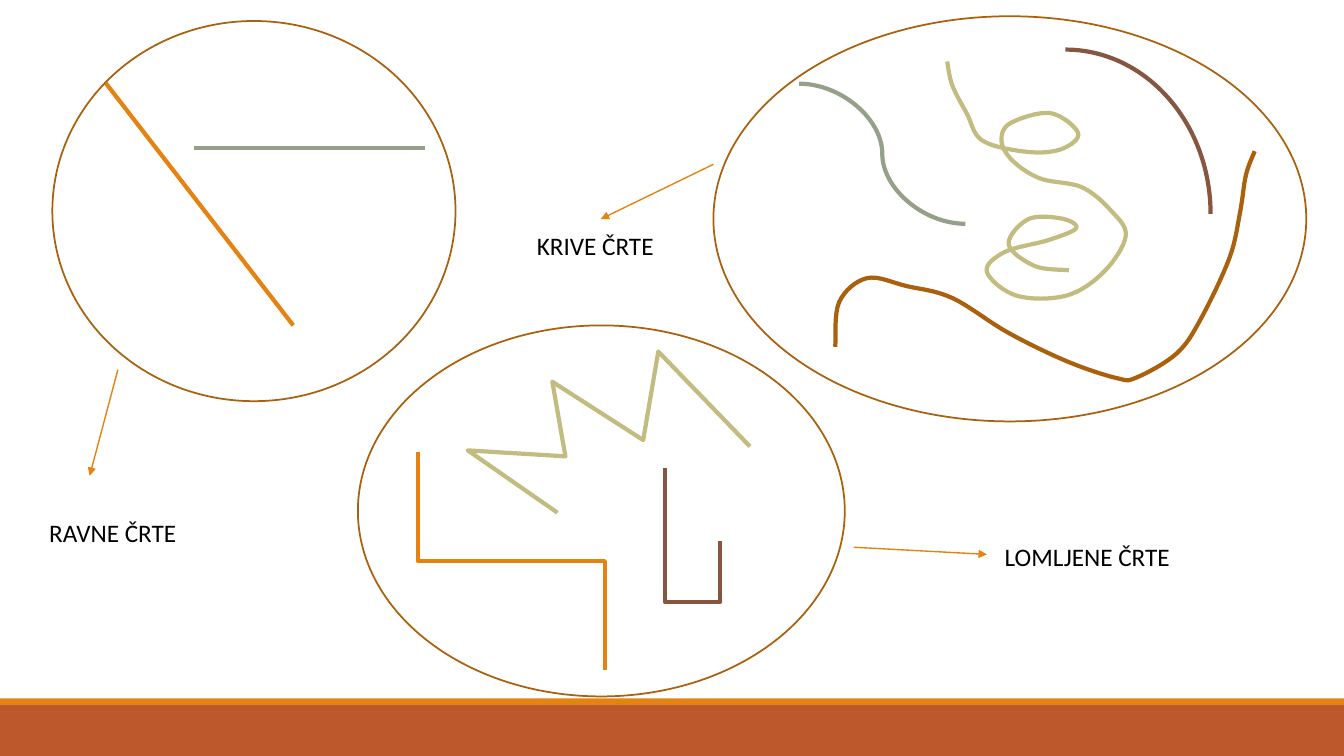
from lxml import etree
from pptx import Presentation, util as u
from pptx.dml.color import RGBColor
from pptx.enum import shapes as s, text as t
from pptx.oxml.ns import qn

HUES = {"orange": "E48312", "rust": "BD582C", "brown": "A9610D",
        "plum": "865640", "sage": "94A088", "olive": "C2BC80", "black": "000000"}
LINE = s.MSO_CONNECTOR
FORM = s.MSO_SHAPE
BOLD, RING, THIN = 3, 1.25, 1  # line widths in points
GRID = 1000  # freeform steps per centimetre
STEPS = 8    # short segments between two knots of a curve

# Knots in centimetres, from the top left corner of each drawn line
ZIGZAG = [(2.26, 4.06), (0, 2.49), (2.46, 2.64), (2.13, 0.76), (4.42, 2.23),
          (4.8, 0), (7.11, 2.39)]
WAVE = [(0, 4.93), (0.1, 3.8), (0.8, 3.2), (1.8, 3.4), (2.95, 3.7), (4.35, 4.57),
        (5.85, 5.3), (7.1, 5.72), (7.6, 5.7), (8.6, 5.1), (9.2, 4.25),
        (9.93, 2.7), (10.2, 1.55), (10.35, 0.6), (10.57, 0)]
SCROLL = [(3.07, 5.26), (2.2, 5.15), (1.55, 4.6), (2.05, 3.97), (2.9, 3.96),
          (3.25, 4.2), (2.55, 4.5), (1.45, 4.8), (1, 5.3), (1.75, 5.9), (3, 5.9),
          (3.95, 5.3), (4.5, 4.4), (4.15, 3.78), (3.4, 3.17), (2.35, 2.95),
          (1.65, 2.5), (1.37, 2), (1.6, 1.55), (2.6, 1.3), (3.3, 1.8),
          (2.9, 2.2), (2.05, 2.28), (0.9, 2), (0.5, 1.32), (0.13, 0.6), (0, 0)]


def tint(hue):
    return RGBColor.from_string(HUES[hue])


def shift(box, at):
    """Turn a place inside a box into a place on the slide."""
    return [edge + step for edge, step in zip(box, at)]


def smooth(knots):
    """Lead a Catmull-Rom curve through the knots."""
    ends = [knots[0], *knots, knots[-1]]
    curve = [knots[0]]
    for span in zip(ends, ends[1:], ends[2:], ends[3:]):
        for step in range(1, STEPS + 1):
            f = step / STEPS
            curve.append([
                b + f / 2 * (c - a + f * (2 * a - 5 * b + 4 * c - d
                                          + f * (3 * b - a - 3 * c + d)))
                for a, b, c, d in zip(*span)])
    return curve


# Basic parts

def stroke(part, hue, width):
    part.line.color.rgb = tint(hue)
    part.line.width = u.Pt(width)


def link(page, box, kind, start, end, hue, width=BOLD):
    ends = map(u.Cm, shift(box, start) + shift(box, end))
    line = page.shapes.add_connector(kind, *ends)
    stroke(line, hue, width)
    etree.SubElement(line._element.spPr, qn("a:effectLst"))
    return line


def elbow(page, box, start, size, hue, bend=50):
    """Bent line that leaves downwards; bend is its crossbar's place in percent."""
    line = link(page, box, LINE.ELBOW, start, shift(start, size), hue)
    props = line._element.spPr
    frame = props.find(qn("a:xfrm"))
    for key, value in {"rot": "16200000", "flipH": "1"}.items():
        frame.set(key, value)
    guides = props.find(qn("a:prstGeom")).get_or_add_avLst()
    etree.SubElement(guides, qn("a:gd"), name="adj1", fmla=f"val {bend * 1000}")


def shape(page, form, box):
    part = page.shapes.add_shape(form, *map(u.Cm, box))
    part.shadow.inherit = False
    return part


def outline(page, form, box, hue, width):
    part = shape(page, form, box)
    part.fill.background()
    stroke(part, hue, width)


def free(page, box, at, points, hue):
    first, *rest = [(x * GRID, y * GRID) for x, y in points]
    pen = page.shapes.build_freeform(*first, scale=u.Cm(1) / GRID)
    pen.add_line_segments(rest, close=False)
    part = pen.convert_to_shape(*map(u.Cm, shift(box, at)))
    part.shadow.inherit = False
    part.fill.background()
    stroke(part, hue, BOLD)


def label(page, box, at, width, words):
    place = shift(box, at) + [width, 1.02]
    frame = page.shapes.add_textbox(*map(u.Cm, place)).text_frame
    frame.word_wrap = True
    frame.auto_size = t.MSO_AUTO_SIZE.SHAPE_TO_FIT_TEXT
    frame.text = words
    font = frame.paragraphs[0].runs[0].font
    for key, value in {"name": "Calibri", "size": u.Pt(18)}.items():
        setattr(font, key, value)
    font.color.rgb = tint("black")


def frame_set(page, box, tail, tip, at, width, words):
    """Ring a set of lines and point from it to its name."""
    outline(page, FORM.OVAL, box, "brown", RING)
    line = link(page, box, LINE.STRAIGHT, tail, tip, "orange", THIN)
    etree.SubElement(line.line._get_or_add_ln(), qn("a:tailEnd"), type="triangle")
    label(page, box, at, width, words)


# Regions

def footer(page, box):
    x, y, w, h = box
    rim = 0.17
    for hue, top, tall in (("rust", y + rim, h - rim), ("orange", y, rim)):
        bar = shape(page, FORM.RECTANGLE, (x, top, w, tall))
        bar.fill.solid()
        bar.fill.fore_color.rgb = tint(hue)
        bar.line.fill.background()


def straight(page, box):
    for start, end, hue in (((1.35, 1.57), (6.07, 7.67), "orange"),
                            ((3.56, 3.2), (9.4, 3.2), "sage")):
        link(page, box, LINE.STRAIGHT, start, end, hue)
    frame_set(page, box, tail=(1.65, 8.79), tip=(0.94, 11.46),
              at=(-0.33, 12.37), width=3.91, words="RAVNE ČRTE")


def broken(page, box):
    elbow(page, box, (1.12, 3.58), (5.49, 4.72), "orange")
    elbow(page, box, (7.52, 3.81), (1.83, 1.4), "plum", bend=184.6)
    free(page, box, (2.77, 0.66), ZIGZAG, "olive")
    frame_set(page, box, tail=(12.5, 5.59), tip=(15.85, 5.77),
              at=(16.05, 5.31), width=4.98, words="LOMLJENE ČRTE")


def curved(page, box):
    for at, knots, hue in (((3.07, 3.4), WAVE, "brown"),
                           ((5.89, 1.14), SCROLL, "olive")):
        free(page, box, at, smooth(knots), hue)
    link(page, box, LINE.CURVE, (2.16, 1.7), (6.35, 5.23), "sage")
    arc = shift(box, (5.21, 0.84)) + [7.32, 8.28]
    outline(page, FORM.ARC, arc, "plum", BOLD)
    frame_set(page, box, tail=(0, 3.73), tip=(-2.84, 5.11),
              at=(-4.7, 5.26), width=3.91, words="KRIVE ČRTE")


def main():
    deck = Presentation()
    wide, high, band = 33.87, 19.05, 1.45
    deck.slide_width, deck.slide_height = u.Cm(wide), u.Cm(high)
    page = deck.slides.add_slide(deck.slide_layouts.get_by_name("Blank"))
    # Each region with its box: left, top, width, height
    for draw, box in ((footer, (0, high - band, wide, band)),
                      (straight, (1.32, 0.53, 10.16, 9.58)),
                      (broken, (9.02, 8.2, 12.27, 9.35)),
                      (curved, (17.98, 0.41, 14.94, 10.21))):
        draw(page, box)
    deck.save("out.pptx")


if __name__ == "__main__":
    main()
